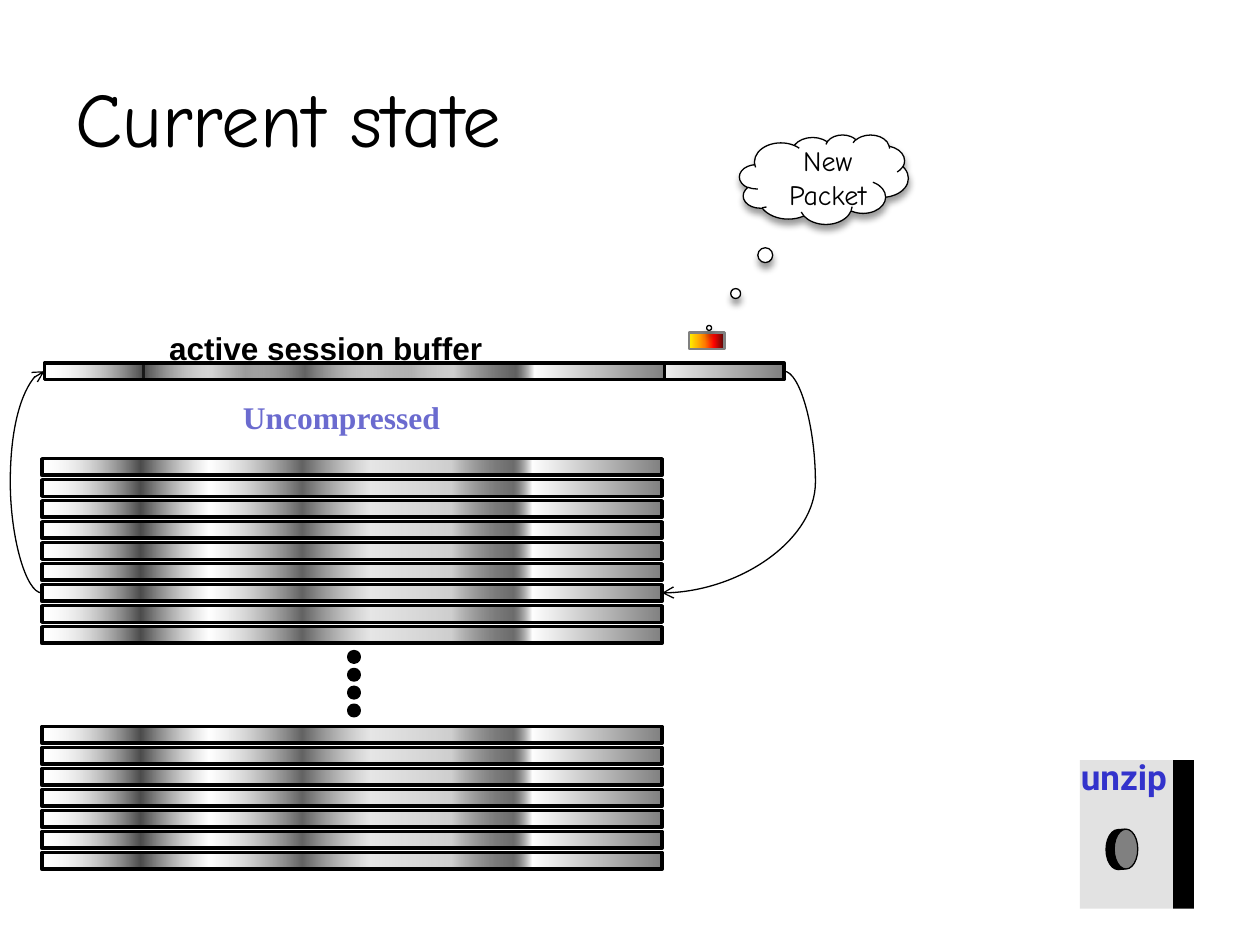
from lxml import etree
from pptx import Presentation
from pptx.dml.color import RGBColor
from pptx.enum.shapes import MSO_CONNECTOR, MSO_SHAPE
from pptx.enum.text import MSO_ANCHOR, PP_ALIGN
from pptx.oxml.ns import qn
from pptx.util import Pt

RECTANGLE, OVAL = MSO_SHAPE.RECTANGLE, MSO_SHAPE.OVAL
DOT, CLOUD = MSO_SHAPE.FLOWCHART_CONNECTOR, MSO_SHAPE.CLOUD_CALLOUT
STRAIGHT, CURVE = MSO_CONNECTOR.STRAIGHT, MSO_CONNECTOR.CURVE
LEFT, CENTER = PP_ALIGN.LEFT, PP_ALIGN.CENTER
MIDDLE, TOP = MSO_ANCHOR.MIDDLE, MSO_ANCHOR.TOP

BLACK = RGBColor(0x00, 0x00, 0x00)
WHITE = RGBColor(0xFF, 0xFF, 0xFF)
GRAY = RGBColor(0x80, 0x80, 0x80)
FACE_GRAY = RGBColor(0xE2, 0xE2, 0xE2)
LAVENDER = RGBColor(0x6B, 0x6B, 0xCF)
BLUE = RGBColor(0x33, 0x33, 0xCC)

# Gradient stops: position in percent, colour, opacity in percent
BUFFER_STOPS = [
    (0, "FFFFFF", 0), (16, "1F1F1F", 80), (27, "FFFFFF", 46),
    (42, "636363", 100), (53, "CFCFCF", 50), (66, "CFCFCF", 100),
    (76, "1F1F1F", 65), (79, "FFFFFF", 100), (100, "7F7F7F", 100),
]
PACKET_STOPS = [(0, "FFF200", 100), (45, "FF7A00", 100),
                (70, "FF0300", 100), (100, "4D0808", 100)]

TITLE = "Current state"
TITLE_BOX = (36, 21.6, 648, 90)
LABELS = [  # text, box, format
    ("Uncompressed", (115.9, 223.9, 158.4, 28.8),
     dict(size=18, font="Times New Roman", color=LAVENDER, bold=True)),
    ("active session buffer", (85.7, 184.3, 200.9, 28.8),
     dict(size=18, font="Arial", bold=True, wrap=False)),
    ("New\nPacket", (386.6, 78.5, 172.8, 46.1),
     dict(size=16, font="Comic Neue")),
    ("unzip", (607.7, 428.4, 69.1, 31.7),
     dict(size=20, font="Roboto", color=BLUE, bold=True, wrap=False)),
]

ROW_LEFT, ROW_WIDTH, ROW_HEIGHT, ROW_STEP = 23.9, 354.4, 9.5, 12
ROW_GROUPS = [(262.1, 9), (415.2, 7)]  # first top, number of rows
ACTIVE_TOP = 207.4
ACTIVE_BARS = [(82, 366), (25.4, 354.4)]  # left, width
DOT_LEFT, DOT_TOP, DOT_SIZE, DOT_STEP, DOT_COUNT = 199.3, 372.4, 6, 10.2, 4

SWAPPED_ROW = 6
LOOP_REACH = 18
ACTIVE_MIDDLE = ACTIVE_TOP + ROW_HEIGHT / 2
SWAPPED_MIDDLE = ROW_GROUPS[0][0] + SWAPPED_ROW * ROW_STEP + ROW_HEIGHT / 2
LOOPS = [  # begin, end
    ((ROW_LEFT, SWAPPED_MIDDLE), (25.4, ACTIVE_MIDDLE)),
    ((448, ACTIVE_MIDDLE), (ROW_LEFT + ROW_WIDTH, SWAPPED_MIDDLE)),
]

UNZIP_PARTS = [  # preset, box, fill, line width
    (RECTANGLE, (617.1, 434.3, 53.3, 85), FACE_GRAY, 0),
    (RECTANGLE, (670.3, 434.3, 12, 85), BLACK, 0),
    (OVAL, (632, 474.1, 13.7, 22.8), BLACK, 0.75),
    (OVAL, (636.7, 473.8, 13.5, 22.8), GRAY, 0.75),
]
KNOB_EDGES = [((643, 473.8), (638.6, 474.1)), ((643, 496.6), (638.6, 496.9))]


def add_child(parent, tag, **attributes):
    child = etree.SubElement(parent, qn(tag))
    for name, value in attributes.items():
        child.set(name, str(value))
    return child


def add_color(parent, color, opacity):
    node = add_child(parent, "a:srgbClr", val=color)
    if opacity < 100:
        add_child(node, "a:alpha", val=opacity * 1000)


def write_text(frame, text, *, size, font, color=BLACK, bold=False,
               align=CENTER, anchor=TOP, wrap=True):
    frame.word_wrap = wrap
    frame.vertical_anchor = anchor
    paragraph = frame.paragraphs[0]
    paragraph.text = text
    paragraph.alignment = align
    for run in paragraph.runs:
        run.font.size, run.font.name = Pt(size), font
        run.font.bold, run.font.color.rgb = bold, color


def add_shape(slide, preset, box, fill, line_width, line_color=BLACK):
    """Add a shape; fill is one colour or a list of gradient stops."""
    shape = slide.shapes.add_shape(preset, *map(Pt, box))
    shape.shadow.inherit = False
    if isinstance(fill, RGBColor):
        shape.fill.solid()
        shape.fill.fore_color.rgb = fill
    else:
        shape.fill.gradient()
        shape.fill.gradient_angle = 0
        stops = shape._element.spPr.find(qn("a:gradFill")).find(qn("a:gsLst"))
        for stop in list(stops):
            stops.remove(stop)
        for position, color, opacity in fill:
            add_color(add_child(stops, "a:gs", pos=position * 1000), color, opacity)
    if line_width:
        shape.line.color.rgb = line_color
        shape.line.width = Pt(line_width)
    else:
        shape.line.fill.background()
    return shape


def add_line(slide, kind, begin, end):
    line = slide.shapes.add_connector(kind, *map(Pt, (*begin, *end)))
    line.line.color.rgb = BLACK
    line.line.width = Pt(0.75)
    add_child(line._element.spPr, "a:effectLst")
    return line


def add_loop(slide, begin, end):
    """Add a curved arrow that bulges outward by LOOP_REACH."""
    properties = add_line(slide, CURVE, begin, end)._element.spPr
    add_child(properties.find(qn("a:ln")), "a:tailEnd", type="arrow")
    bend = round(-LOOP_REACH / abs(end[0] - begin[0]) * 100000)
    guides = properties.find(qn("a:prstGeom")).find(qn("a:avLst"))
    add_child(guides, "a:gd", name="adj1", fmla=f"val {bend}")


def add_cloud(slide):
    cloud = add_shape(slide, CLOUD, (422.6, 77, 96.5, 51.1), WHITE, 0.75)
    cloud.adjustments[0], cloud.adjustments[1] = -0.68, 1.66
    shadow = add_child(cloud._element.spPr.find(qn("a:effectLst")), "a:outerShdw",
                       blurRad=Pt(4), dist=Pt(3), dir=90 * 60000, rotWithShape=0)
    add_color(shadow, "000000", 40)


def main():
    presentation = Presentation()
    presentation.slide_width, presentation.slide_height = Pt(720), Pt(540)
    slide = presentation.slides.add_slide(presentation.slide_layouts[5])

    title = slide.shapes.title
    title.left, title.top, title.width, title.height = map(Pt, TITLE_BOX)
    write_text(title.text_frame, TITLE, size=44, font="Comic Neue",
               align=LEFT, anchor=MIDDLE)

    bars = [(left, ACTIVE_TOP, width) for left, width in ACTIVE_BARS]
    bars += [(ROW_LEFT, top + row * ROW_STEP, ROW_WIDTH)
             for top, count in ROW_GROUPS for row in range(count)]
    for bar in bars:
        add_shape(slide, RECTANGLE, (*bar, ROW_HEIGHT), BUFFER_STOPS, 2)
    for index in range(DOT_COUNT):
        box = (DOT_LEFT, DOT_TOP + index * DOT_STEP, DOT_SIZE, DOT_SIZE)
        add_shape(slide, DOT, box, BLACK, 2)

    add_shape(slide, RECTANGLE, (393.8, 190.1, 20.2, 9.4), PACKET_STOPS, 1.5, GRAY)
    for begin, end in LOOPS:
        add_loop(slide, begin, end)
    add_cloud(slide)

    for part in UNZIP_PARTS:
        add_shape(slide, *part)
    for begin, end in KNOB_EDGES:
        add_line(slide, STRAIGHT, begin, end)

    for text, box, text_format in LABELS:
        label = slide.shapes.add_textbox(*map(Pt, box))
        write_text(label.text_frame, text, **text_format)

    presentation.save("out.pptx")


if __name__ == "__main__":
    main()
